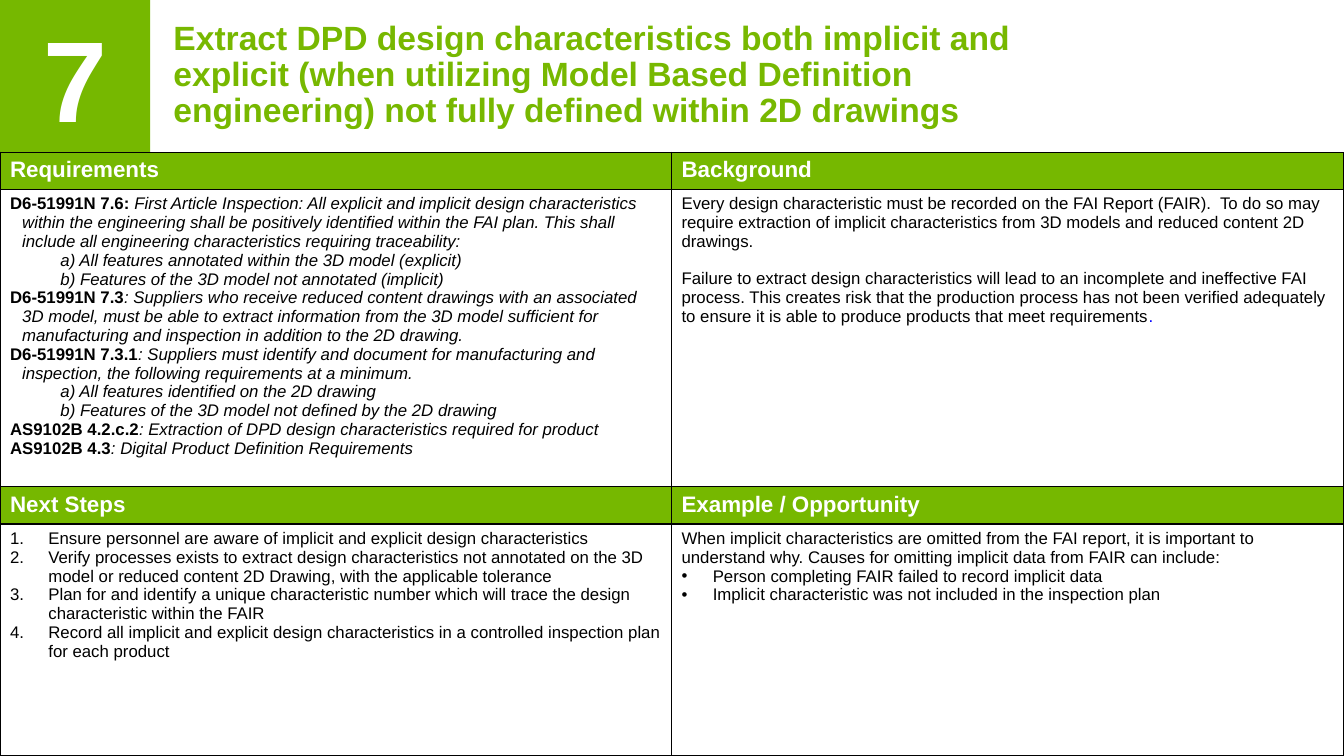
"""Build the requirement 7 slide: numbered title above a four-part table."""
from lxml.etree import SubElement
from pptx import Presentation
from pptx.dml.color import RGBColor
from pptx.enum.shapes import MSO_SHAPE as SHAPE
from pptx.enum.text import MSO_ANCHOR as ANCHOR, MSO_AUTO_SIZE as AUTO, PP_ALIGN as ALIGN
from pptx.oxml.ns import qn
from pptx.util import Inches, Pt

COLORS = {"green": "76B800", "title": "77B800", "white": "FFFFFF",
          "black": "000000", "blue": "0000FF"}
TITLE = ("Extract DPD design characteristics both implicit and explicit (when utilizing "
         "Model Based Definition engineering) not fully defined within 2D drawings")
ROW_HEIGHTS = (0.37, 2.95, 0.37, 2.3)
COL_WIDTHS = (6.66, 6.67)

CLAUSES = [
    ("D6-51991N 7.6: ",
     "First Article Inspection: All explicit and implicit design characteristics within the "
     "engineering shall be positively identified within the FAI plan. This shall include all "
     "engineering characteristics requiring traceability:", 0.12,
     ["a) All features annotated within the 3D model (explicit)",
      "b) Features of the 3D model not annotated (implicit)"]),
    ("D6-51991N 7.3",
     ": Suppliers who receive reduced content drawings with an associated 3D model, must be "
     "able to extract information from the 3D model sufficient for manufacturing and "
     "inspection in addition to the 2D drawing.", 0.12, []),
    ("D6-51991N 7.3.1",
     ": Suppliers must identify and document for manufacturing and inspection, the following "
     "requirements at a minimum.", 0.12,
     ["a) All features identified on the 2D drawing",
      "b) Features of the 3D model not defined by the 2D drawing"]),
    ("AS9102B 4.2.c.2",
     ": Extraction of DPD design characteristics required for product", 0, []),
    ("AS9102B 4.3", ": Digital Product Definition Requirements", 0, []),
]
BACKGROUND = [
    "Every design characteristic must be recorded on the FAI Report (FAIR).  To do so may "
    "require extraction of implicit characteristics from 3D models and reduced content 2D "
    "drawings.",
    "Failure to extract design characteristics will lead to an incomplete and ineffective FAI "
    "process. This creates risk that the production process has not been verified adequately "
    "to ensure it is able to produce products that meet requirements",
]
NEXT_STEPS = [
    "Ensure personnel are aware of implicit and explicit design characteristics",
    "Verify processes exists to extract design characteristics not annotated on the 3D model "
    "or reduced content 2D Drawing, with the applicable tolerance",
    "Plan for and identify a unique characteristic number which will trace the design "
    "characteristic within the FAIR",
    "Record all implicit and explicit design characteristics in a controlled inspection plan "
    "for each product",
]
EXAMPLE = ("When implicit characteristics are omitted from the FAI report, it is important to "
           "understand why. Causes for omitting implicit data from FAIR can include:")
CAUSES = [
    "Person completing FAIR failed to record implicit data",
    "Implicit characteristic was not included in the inspection plan",
]


def rgb(name):
    return RGBColor.from_string(COLORS[name])


def add_run(p, text, size=12, color="black", bold=False, italic=False):
    r = p.add_run()
    r.text = text
    r.font.name = "Arial"
    r.font.size = Pt(size)
    r.font.bold = bold
    r.font.italic = italic
    r.font.color.rgb = rgb(color)


def add_paragraph(tf, left=0, hang=0, number=False, bullet=False):
    first = tf.paragraphs[0]
    p = tf.add_paragraph() if first.runs else first
    pPr = p._p.get_or_add_pPr()
    pPr.set("marL", str(Inches(left)))
    pPr.set("indent", str(-Inches(hang)))
    if number:
        SubElement(pPr, qn("a:buFont"), typeface="+mj-lt")
        SubElement(pPr, qn("a:buAutoNum"), type="arabicPeriod")
    elif bullet:
        SubElement(pPr, qn("a:buFont"), typeface="Arial")
        SubElement(pPr, qn("a:buChar"), char="•")
    return p


def set_borders(cell):
    tcPr = cell._tc.get_or_add_tcPr()
    for side in ("lnL", "lnR", "lnT", "lnB"):
        ln = SubElement(tcPr, qn(f"a:{side}"), w=str(Pt(1)))
        fill = SubElement(ln, qn("a:solidFill"))
        SubElement(fill, qn("a:srgbClr"), val=COLORS["black"])


def add_title(slide):
    sp = slide.shapes.title
    sp.left, sp.top, sp.width, sp.height = map(Inches, (1.62, 0.14, 9.01, 1.22))
    tf = sp.text_frame
    tf.word_wrap = True
    tf.auto_size = AUTO.NONE
    tf.vertical_anchor = ANCHOR.MIDDLE
    p = tf.paragraphs[0]
    p.alignment = ALIGN.LEFT
    p.line_spacing = 0.9
    add_run(p, TITLE, 24, "title", bold=True)


def add_number(slide, number):
    sp = slide.shapes.add_shape(SHAPE.RECTANGLE, 0, 0, Inches(1.49), Inches(1.51))
    sp.shadow.inherit = False
    sp.fill.solid()
    sp.fill.fore_color.rgb = rgb("green")
    sp.line.fill.background()
    tf = sp.text_frame
    tf.vertical_anchor = ANCHOR.MIDDLE
    p = tf.paragraphs[0]
    p.alignment = ALIGN.CENTER
    add_run(p, number, 82, "white", bold=True)


def add_grid(slide):
    frame = slide.shapes.add_table(4, 2, 0, Inches(1.51), Inches(sum(COL_WIDTHS)),
                                   Inches(sum(ROW_HEIGHTS)))
    table = frame.table
    table.first_row = table.horz_banding = False
    for column, width in zip(table.columns, COL_WIDTHS):
        column.width = Inches(width)
    for row, height in zip(table.rows, ROW_HEIGHTS):
        row.height = Inches(height)
    for cell in table.iter_cells():
        set_borders(cell)
        cell.fill.background()
    return table


def fill_heading(cell, text):
    cell.fill.solid()
    cell.fill.fore_color.rgb = rgb("green")
    add_run(add_paragraph(cell.text_frame), text, 16, "white", bold=True)


def fill_requirements(tf):
    for code, text, hang, features in CLAUSES:
        p = add_paragraph(tf, hang, hang)
        add_run(p, code, bold=True)
        add_run(p, text, italic=True)
        for feature in features:
            add_run(add_paragraph(tf, 0.5), feature, italic=True)


def fill_background(tf):
    for text in BACKGROUND:
        p = add_paragraph(tf)
        add_run(p, text)
    p.space_before = Pt(13.4)
    add_run(p, ".", color="blue")


def fill_next_steps(tf):
    for step in NEXT_STEPS:
        add_run(add_paragraph(tf, 0.38, 0.38, number=True), step)


def fill_example(tf):
    add_run(add_paragraph(tf), EXAMPLE)
    for cause in CAUSES:
        add_run(add_paragraph(tf, 0.31, 0.31, bullet=True), cause)


def main():
    prs = Presentation()
    prs.slide_width, prs.slide_height = Inches(13.33), Inches(7.5)
    slide = prs.slides.add_slide(prs.slide_layouts[5])
    add_title(slide)
    add_number(slide, "7")
    table = add_grid(slide)
    sections = [("Requirements", fill_requirements), ("Background", fill_background),
                ("Next Steps", fill_next_steps), ("Example / Opportunity", fill_example)]
    for i, (heading, fill_body) in enumerate(sections):
        row, col = i // 2 * 2, i % 2
        fill_heading(table.cell(row, col), heading)
        fill_body(table.cell(row + 1, col).text_frame)
    prs.save("out.pptx")


if __name__ == "__main__":
    main()
